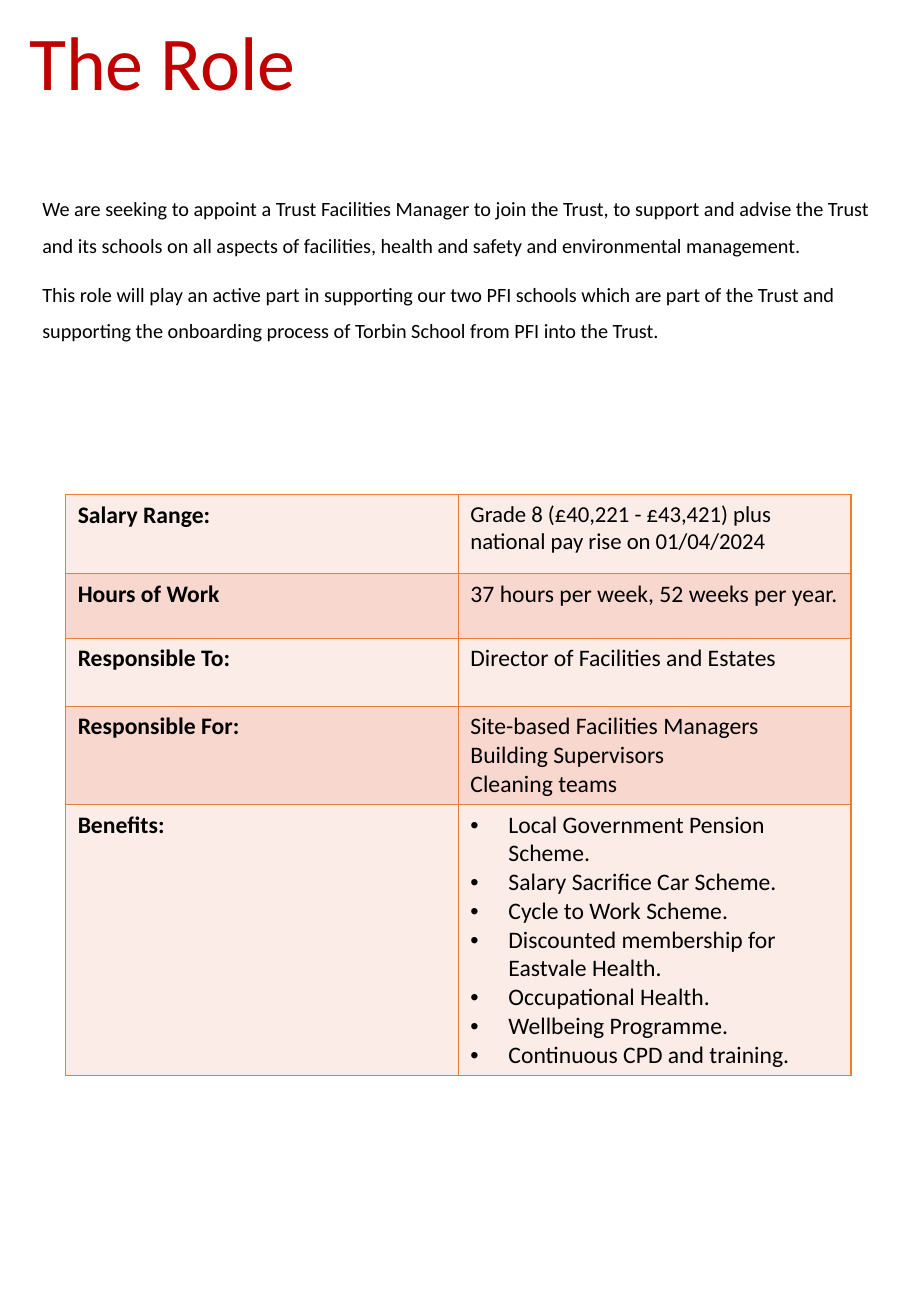
from dataclasses import dataclass

from lxml import etree
from pptx import Presentation
from pptx.dml.color import RGBColor
from pptx.enum.text import MSO_ANCHOR, MSO_AUTO_SIZE, PP_ALIGN
from pptx.oxml.ns import qn
from pptx.slide import Slide
from pptx.table import _Cell
from pptx.text.text import TextFrame, _Paragraph
from pptx.util import Pt

LEFT = PP_ALIGN.LEFT
MIDDLE = MSO_ANCHOR.MIDDLE
TOP = MSO_ANCHOR.TOP
NO_AUTOFIT = MSO_AUTO_SIZE.NONE

TITLE_ONLY_LAYOUT = 5
FONT = "Calibri"
BLACK = "000000"
RED = "C00000"
ORANGE = "ED7D31"
BAND_FILLS = ("FCECE8", "F8D7CE")
COLUMN_WIDTH = 232.8
BULLET_INDENT = 22.5


@dataclass(frozen=True)
class RoleDetail:
    label: str
    lines: tuple[str, ...]
    height: float
    size: float = 14
    bulleted: bool = False


INTRODUCTION = (
    "We are seeking to appoint a Trust Facilities Manager to join the Trust, to support and advise "
    "the Trust and its schools on all aspects of facilities, health and safety and environmental management.",
    "This role will play an active part in supporting our two PFI schools which are part of the Trust "
    "and supporting the onboarding process of Torbin School from PFI into the Trust.",
)

ROLE_DETAILS = (
    RoleDetail(
        "Salary Range:",
        ("Grade 8 (£40,221 - £43,421) plus national pay rise on 01/04/2024",),
        46.8,
        size=13.5,
    ),
    RoleDetail("Hours of Work", ("37 hours per week, 52 weeks per year.",), 38.5),
    RoleDetail("Responsible To:", ("Director of Facilities and Estates",), 40.3),
    RoleDetail(
        "Responsible For:",
        ("Site-based Facilities Managers", "Building Supervisors", "Cleaning teams"),
        58.1,
    ),
    RoleDetail(
        "Benefits:",
        (
            "Local Government Pension Scheme.",
            "Salary Sacrifice Car Scheme.",
            "Cycle to Work Scheme.",
            "Discounted membership for Eastvale Health.",
            "Occupational Health.",
            "Wellbeing Programme.",
            "Continuous CPD and training.",
        ),
        160.6,
        bulleted=True,
    ),
)


def color(value: str) -> RGBColor:
    return RGBColor.from_string(value)


def write_lines(
    text_frame: TextFrame,
    lines: tuple[str, ...],
    size: float,
    font_color: str = BLACK,
    bold: bool = False,
) -> None:
    text_frame.text = "\n".join(lines)
    for paragraph in text_frame.paragraphs:
        paragraph.alignment = LEFT
        for run in paragraph.runs:
            run.font.name = FONT
            run.font.size = Pt(size)
            run.font.bold = bold
            run.font.color.rgb = color(font_color)


def add_bullet(paragraph: _Paragraph) -> None:
    properties = paragraph._p.get_or_add_pPr()
    properties.set("marL", str(Pt(BULLET_INDENT)))
    properties.set("indent", str(-Pt(BULLET_INDENT)))
    etree.SubElement(properties, qn("a:buFont"), typeface="Arial")
    etree.SubElement(properties, qn("a:buChar"), char="•")


def format_cell(cell: _Cell, fill: str) -> None:
    cell.vertical_anchor = TOP
    cell.margin_left = Pt(7.2)
    cell.margin_right = Pt(5.4)
    cell.margin_top = cell.margin_bottom = Pt(3.6)
    properties = cell._tc.get_or_add_tcPr()
    for side in ("lnL", "lnR", "lnT", "lnB"):
        line = etree.SubElement(properties, qn(f"a:{side}"), w=str(Pt(1)))
        line_fill = etree.SubElement(line, qn("a:solidFill"))
        etree.SubElement(line_fill, qn("a:srgbClr"), val=ORANGE)
    cell.fill.solid()
    cell.fill.fore_color.rgb = color(fill)


def add_title(slide: Slide) -> None:
    title = slide.shapes.title
    title.left, title.top, title.width, title.height = Pt(10), Pt(2.2), Pt(465.8), Pt(74.2)
    text_frame = title.text_frame
    write_lines(text_frame, ("The Role",), 45, RED)
    text_frame.auto_size = NO_AUTOFIT
    text_frame.vertical_anchor = MIDDLE
    text_frame.paragraphs[0].line_spacing = 0.9


def add_introduction(slide: Slide) -> None:
    text_box = slide.shapes.add_textbox(Pt(18), Pt(76.3), Pt(507.6), Pt(686.9))
    text_frame = text_box.text_frame
    text_frame.word_wrap = True
    text_frame.margin_top = Pt(33)
    write_lines(text_frame, INTRODUCTION, 12)
    for paragraph in text_frame.paragraphs:
        paragraph.line_spacing = 1.5
        paragraph.space_before = Pt(7.5)


def add_role_table(slide: Slide) -> None:
    total_height = sum(detail.height for detail in ROLE_DETAILS)
    table = slide.shapes.add_table(
        len(ROLE_DETAILS), 2, Pt(38.9), Pt(293), Pt(2 * COLUMN_WIDTH), Pt(total_height)
    ).table
    table.first_row = False
    table.horz_banding = False
    for column in table.columns:
        column.width = Pt(COLUMN_WIDTH)
    for index, detail in enumerate(ROLE_DETAILS):
        table.rows[index].height = Pt(detail.height)
        label_cell, value_cell = table.cell(index, 0), table.cell(index, 1)
        for cell in (label_cell, value_cell):
            format_cell(cell, BAND_FILLS[index % 2])
        write_lines(label_cell.text_frame, (detail.label,), 14, bold=True)
        write_lines(value_cell.text_frame, detail.lines, detail.size)
        if detail.bulleted:
            for paragraph in value_cell.text_frame.paragraphs:
                add_bullet(paragraph)


def main() -> None:
    presentation = Presentation()
    presentation.slide_width = Pt(540)
    presentation.slide_height = Pt(779.76)
    slide = presentation.slides.add_slide(presentation.slide_layouts[TITLE_ONLY_LAYOUT])
    add_title(slide)
    add_introduction(slide)
    add_role_table(slide)
    presentation.save("out.pptx")


if __name__ == "__main__":
    main()
